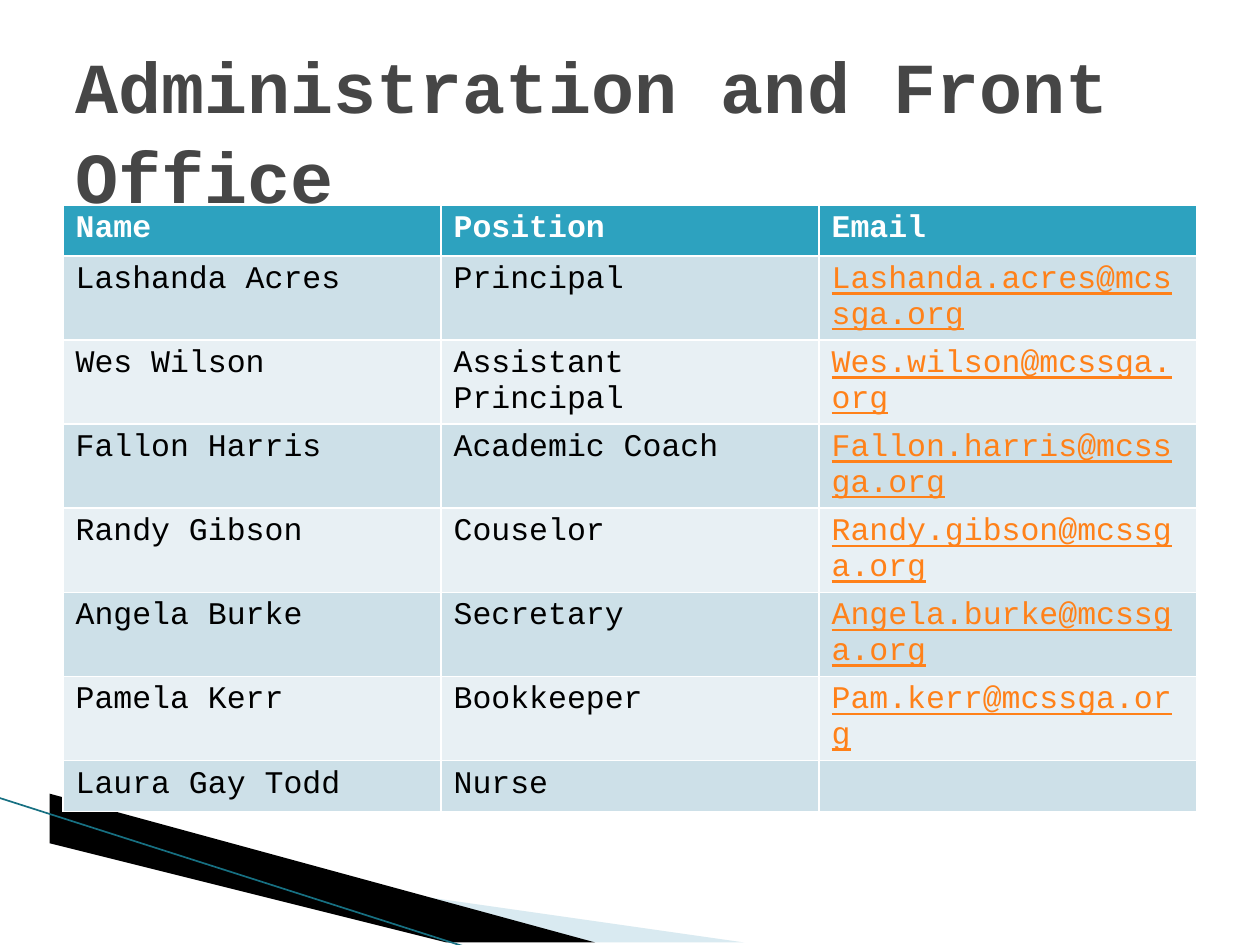
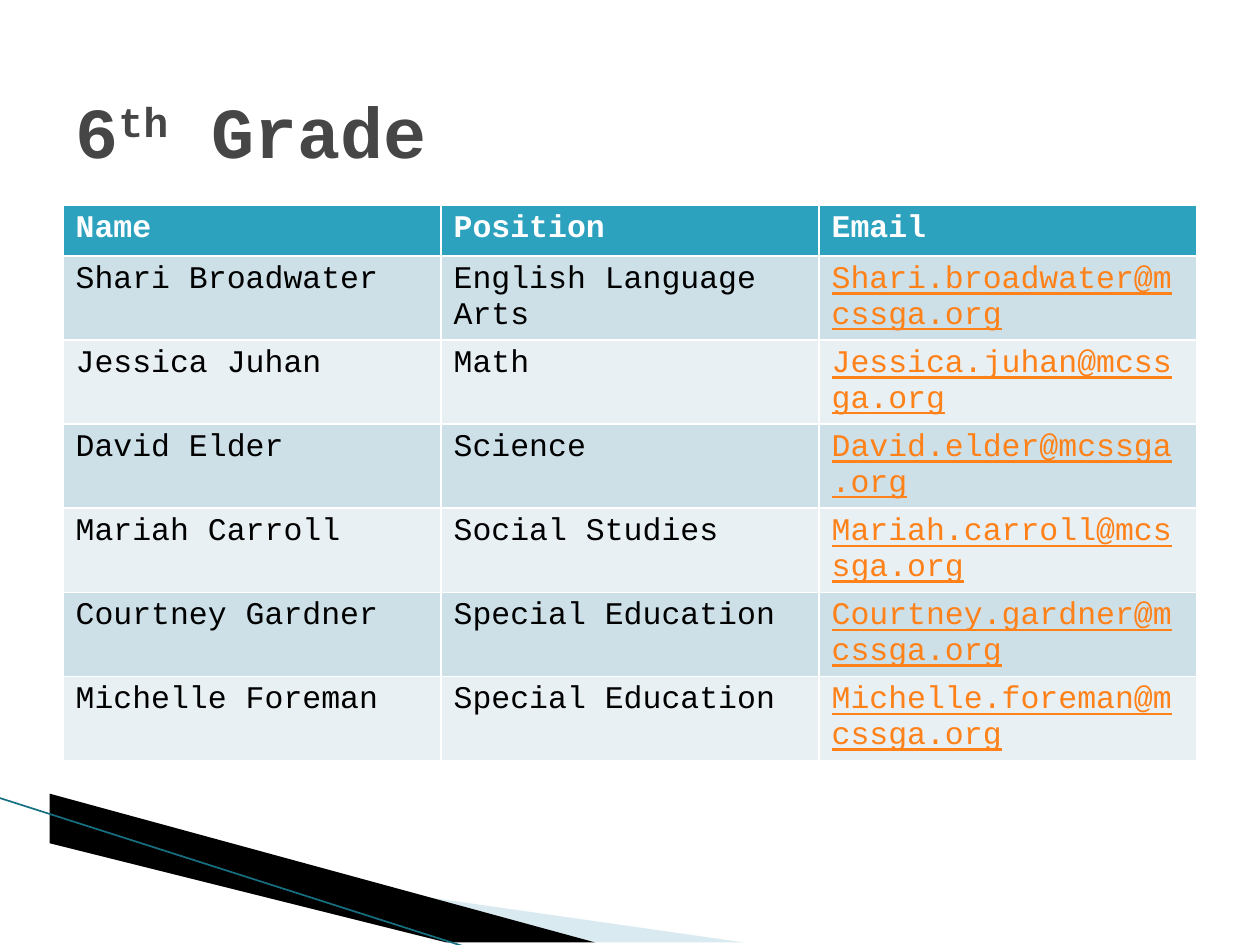
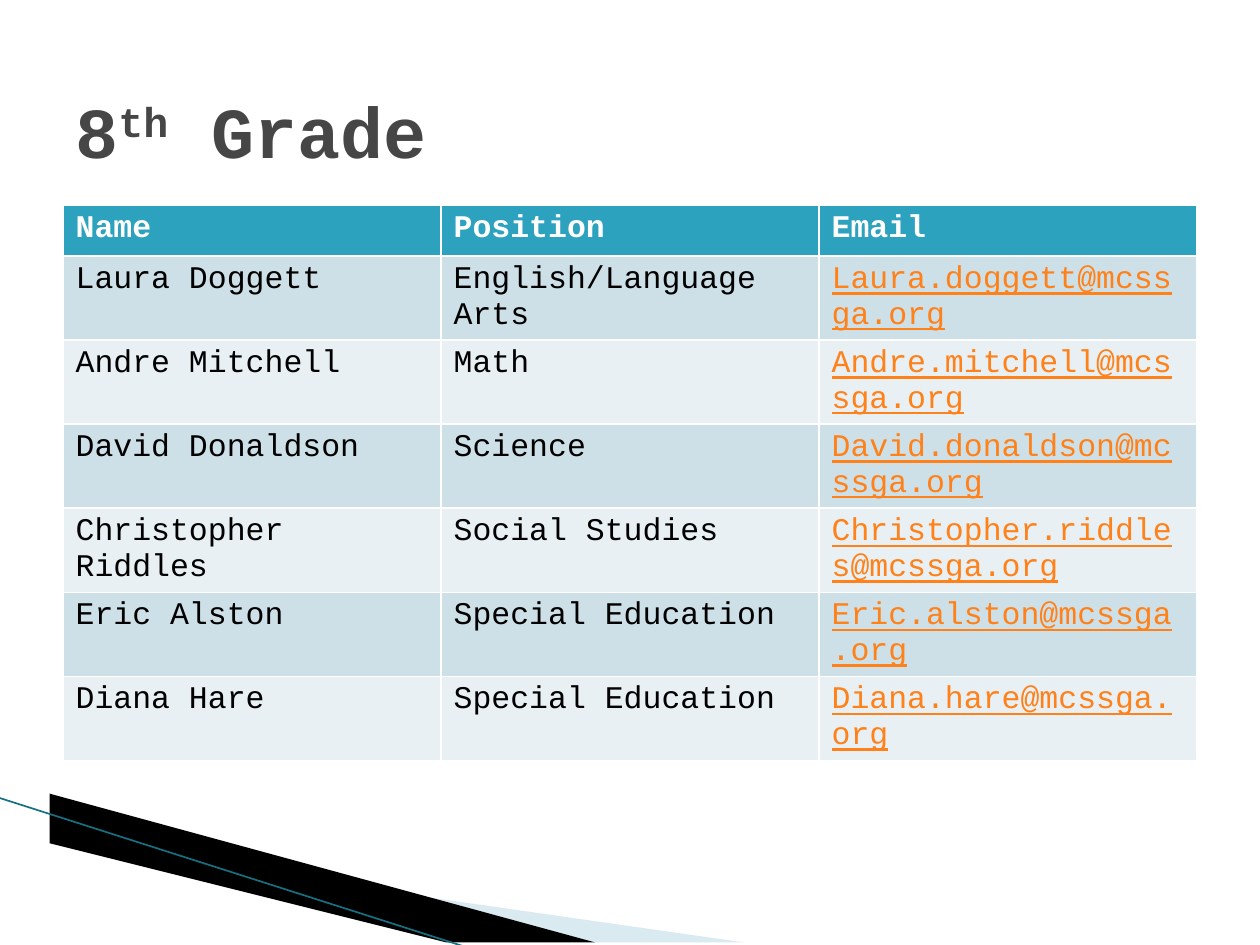
import dataclasses
import pptx
import pptx.util
import pptx.dml.color
import pptx.enum.shapes
import pptx.enum.text
import lxml.etree

Cm = pptx.util.Cm
Pt = pptx.util.Pt
RGB = pptx.dml.color.RGBColor.from_string


@dataclasses.dataclass(frozen=True)
class Theme:
    font: str = "Courier New"
    title: str = "464646"
    head: str = "2DA2BF"
    bands: tuple = ("CDE0E8", "E8F0F4")
    white: str = "FFFFFF"
    ink: str = "000000"
    mail: str = "FF8119"
    pale: str = "A0CBDC"
    edge: str = "177082"
    big: int = 41
    small: int = 18


THEME = Theme()
HEADS = ("Name", "Position", "Email")

PAGES = [
    (["Administration and Front Office"], [
        ("Lashanda Acres", "Principal", "Lashanda.acres@mcssga.org"),
        ("Wes Wilson", "Assistant Principal", "Wes.wilson@mcssga.org"),
        ("Fallon Harris", "Academic Coach", "Fallon.harris@mcssga.org"),
        ("Randy Gibson", "Couselor", "Randy.gibson@mcssga.org"),
        ("Angela Burke", "Secretary", "Angela.burke@mcssga.org"),
        ("Pamela Kerr", "Bookkeeper", "Pam.kerr@mcssga.org"),
        ("Laura Gay Todd", "Nurse", ""),
    ]),
    (["6", "th", " Grade"], [
        ("Shari Broadwater", "English Language Arts", "Shari.broadwater@mcssga.org"),
        ("Jessica Juhan", "Math", "Jessica.juhan@mcssga.org"),
        ("David Elder", "Science", "David.elder@mcssga.org"),
        ("Mariah Carroll", "Social Studies", "Mariah.carroll@mcssga.org"),
        ("Courtney Gardner", "Special Education", "Courtney.gardner@mcssga.org"),
        ("Michelle Foreman", "Special Education", "Michelle.foreman@mcssga.org"),
    ]),
    (["8", "th", " Grade"], [
        ("Laura Doggett", "English/Language Arts", "Laura.doggett@mcssga.org"),
        ("Andre Mitchell", "Math", "Andre.mitchell@mcssga.org"),
        ("David Donaldson", "Science", "David.donaldson@mcssga.org"),
        ("Christopher Riddles", "Social Studies", "Christopher.riddles@mcssga.org"),
        ("Eric Alston", "Special Education", "Eric.alston@mcssga.org"),
        ("Diana Hare", "Special Education", "Diana.hare@mcssga.org"),
    ]),
]

LEFT, WIDTH = 1.27, 22.86
TITLE_TOP, TITLE_HIGH = 0.76, 3.18
TABLE_TOP, ROW_HIGH = 4.13, 1.03

WEDGES = [
    ([(1.4, 16.54), (15.11, 19.08), (11.58, 19.08), (1.4, 16.51)], THEME.pale, 40),
    ([(1.35, 16.48), (11.61, 19.08), (9.45, 19.1), (1.37, 16.51)], THEME.ink, 100),
]
EDGE = [(-0.03, 16.08), (9.42, 19.1)]


def add_xml(node, tag, **attrs):
    return lxml.etree.SubElement(node, pptx.oxml.ns.qn(tag), attrs)


def style(run, size, color, bold=False, line=False):
    font = run.font
    font.name = THEME.font
    font.size = Pt(size)
    font.bold = bold
    font.underline = line
    font.color.rgb = RGB(color)


def draw_wedge(slide, points, color, alpha):
    start, *rest = points
    pen = slide.shapes.build_freeform(*start, scale=Cm(1))
    pen.add_line_segments(rest)
    shape = pen.convert_to_shape()
    shape.shadow.inherit = False
    shape.fill.solid()
    shape.fill.fore_color.rgb = RGB(color)
    shape.line.fill.background()
    if alpha < 100:
        tint = shape.element.spPr.find(".//" + pptx.oxml.ns.qn("a:srgbClr"))
        add_xml(tint, "a:alpha", val=str(alpha * 1000))


def draw_edge(slide):
    ends = [Cm(side) for point in EDGE for side in point]
    edge = slide.shapes.add_connector(pptx.enum.shapes.MSO_CONNECTOR.STRAIGHT, *ends)
    edge.line.color.rgb = RGB(THEME.edge)
    edge.line.width = Pt(0.95)
    add_xml(edge.element.spPr, "a:effectLst")


def draw_title(slide, parts):
    box = slide.shapes.add_textbox(Cm(LEFT), Cm(TITLE_TOP), Cm(WIDTH), Cm(TITLE_HIGH))
    frame = box.text_frame
    frame.word_wrap = True
    frame.margin_top = Cm(0.58)
    frame.vertical_anchor = pptx.enum.text.MSO_ANCHOR.MIDDLE
    para = frame.paragraphs[0]
    para.line_spacing = 1.05
    for part in parts:
        run = para.add_run()
        run.text = part
        style(run, THEME.big, THEME.title, bold=True)
        if part == "th":
            run.font._element.set("baseline", "30000")


def draw_table(slide, people):
    rows = [HEADS, *people]
    grid = slide.shapes.add_table(
        len(rows), len(HEADS), Cm(LEFT), Cm(TABLE_TOP),
        Cm(WIDTH), Cm(ROW_HIGH * len(rows))).table
    for i, row in enumerate(rows):
        for j, text in enumerate(row):
            cell = grid.cell(i, j)
            head, mail = i == 0, i > 0 and j == 2
            cell.fill.solid()
            cell.fill.fore_color.rgb = RGB(THEME.head if head else THEME.bands[(i - 1) % 2])
            cell.text_frame.text = text
            color = THEME.white if head else THEME.mail if mail else THEME.ink
            for run in cell.text_frame.paragraphs[0].runs:
                style(run, THEME.small, color, bold=head, line=mail)


def main():
    deck = pptx.Presentation()
    deck.slide_width, deck.slide_height = Cm(25.4), Cm(19.05)
    for parts, people in PAGES:
        slide = deck.slides.add_slide(deck.slide_layouts[6])
        for wedge in WEDGES:
            draw_wedge(slide, *wedge)
        draw_edge(slide)
        draw_table(slide, people)
        draw_title(slide, parts)
    deck.save("out.pptx")


if __name__ == "__main__":
    main()
